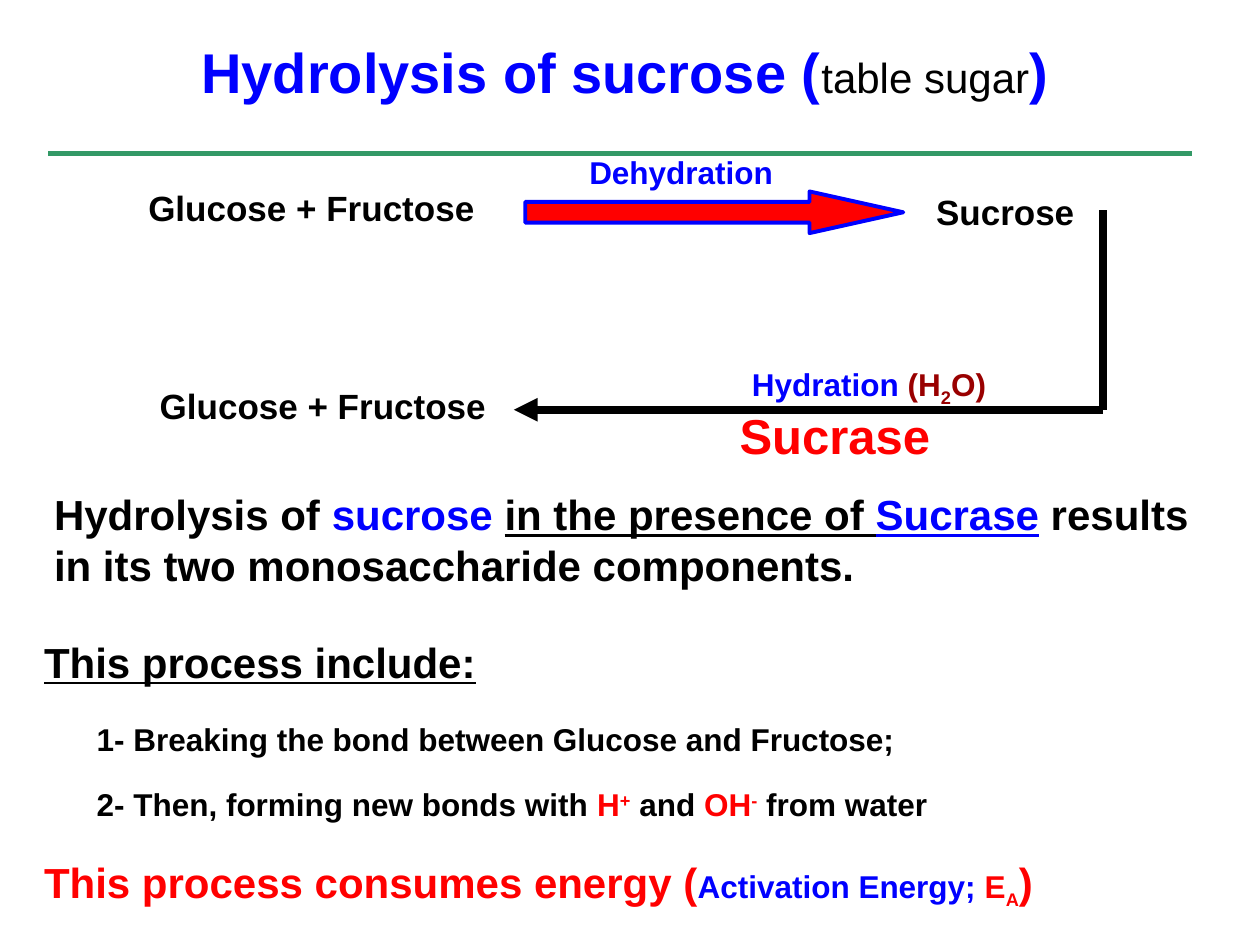
import pptx
import pptx.util
import pptx.dml.color
import pptx.enum.shapes
import pptx.enum.text
import pptx.oxml.ns
import lxml.etree

Cm = pptx.util.Cm
Pt = pptx.util.Pt
RGBColor = pptx.dml.color.RGBColor
qn = pptx.oxml.ns.qn

BLACK = RGBColor(0x00, 0x00, 0x00)
BLUE = RGBColor(0x00, 0x00, 0xFF)
RED = RGBColor(0xFF, 0x00, 0x00)
DARK_RED = RGBColor(0x99, 0x00, 0x00)
GREEN = RGBColor(0x33, 0x99, 0x66)

SUB, SUPER = -25000, 30000


def add_text(shapes, box, size, runs, anchor=pptx.enum.text.MSO_ANCHOR.TOP):
    """Add a text box; each run is (text, colour, optional font settings)."""
    frame = shapes.add_textbox(*(Cm(length) for length in box)).text_frame
    frame.word_wrap = True
    frame.vertical_anchor = anchor
    for text, colour, *settings in runs:
        add_run(frame.paragraphs[0], text, colour, **{"size": size, **dict(*settings)})


def add_run(paragraph, text, colour, size, bold=True, underline=False, baseline=0):
    run = paragraph.add_run()
    run.text = text
    run.font.name = "Arial"
    run.font.size = Pt(size)
    run.font.bold = bold
    run.font.underline = underline
    run.font.color.rgb = colour
    if baseline:
        run.font._element.set("baseline", str(baseline))


def add_line(shapes, start, end, colour, width, arrow=False):
    ends = (Cm(length) for length in (*start, *end))
    line = shapes.add_connector(pptx.enum.shapes.MSO_CONNECTOR.STRAIGHT, *ends)
    line.line.color.rgb = colour
    line.line.width = Pt(width)
    if arrow:
        lxml.etree.SubElement(line.line._get_or_add_ln(), qn("a:tailEnd"), type="triangle")
    lxml.etree.SubElement(line._element.spPr, qn("a:effectLst"))


def add_block_arrow(shapes, box):
    arrow = shapes.add_shape(pptx.enum.shapes.MSO_SHAPE.RIGHT_ARROW,
                             *(Cm(length) for length in box))
    arrow.adjustments[0] = 0.5
    arrow.adjustments[1] = 2.25
    arrow.shadow.inherit = False
    arrow.fill.solid()
    arrow.fill.fore_color.rgb = RED
    arrow.line.color.rgb = BLUE
    arrow.line.width = Pt(2.25)


def add_reaction(shapes):
    monosaccharides = [("Glucose + Fructose", BLACK)]
    add_text(shapes, (2.74, 3.63, 7.42, 1.09), 20, monosaccharides)

    # Dehydration: monosaccharides to sucrose
    dehydration = shapes.add_group_shape().shapes
    add_text(dehydration, (18.62, 3.71, 3.81, 1.09), 20, [("Sucrose", BLACK)])
    add_block_arrow(dehydration, (10.59, 3.86, 7.62, 0.84))
    add_text(dehydration, (11.63, 2.97, 4.45, 1.02), 18, [("Dehydration", BLUE)])

    # Hydration: sucrose back to monosaccharides
    hydration = shapes.add_group_shape().shapes
    corner = (22.23, 8.26)
    add_line(hydration, (22.23, 4.24), corner, BLACK, 4.5)
    add_line(hydration, corner, (10.36, 8.26), BLACK, 4.5, arrow=True)
    add_text(hydration, (14.91, 7.24, 5.31, 1.02), 18, [
        ("Hydration ", BLUE),
        ("(H", DARK_RED),
        ("2", DARK_RED, {"baseline": SUB}),
        ("O)", DARK_RED),
    ])
    add_text(hydration, (14.66, 8.05, 5.31, 1.45), 28, [("Sucrase", RED)])
    add_text(shapes, (2.97, 7.62, 7.42, 1.09), 20, monosaccharides)


def add_explanation(shapes):
    underlined = {"underline": True}
    add_text(shapes, (0.84, 9.73, 23.5, 2.29), 24, [
        ("Hydrolysis of ", BLACK),
        ("sucrose ", BLUE),
        ("in the presence of ", BLACK, underlined),
        ("Sucrase", BLUE, underlined),
        (" results in its two monosaccharide components.", BLACK),
    ])

    # Steps of the process
    add_text(shapes, (0.64, 12.7, 10.36, 1.27), 24,
             [("This process include:", BLACK, underlined)])
    add_text(shapes, (1.7, 14.4, 19.89, 1.02), 18,
             [("1- Breaking the bond between Glucose and Fructose;", BLACK)])
    add_text(shapes, (1.7, 15.7, 19.69, 1.02), 18, [
        ("2- Then, forming new bonds with ", BLACK),
        ("H", RED),
        ("+", RED, {"baseline": SUPER}),
        (" and ", BLACK),
        ("OH", RED),
        ("-", RED, {"baseline": SUPER}),
        (" from water", BLACK),
    ])

    # Energy requirement
    add_text(shapes, (0.64, 17.15, 22.23, 1.27), 24, [
        ("This process consumes energy (", RED),
        ("Activation Energy; ", BLUE, {"size": 18}),
        ("E", RED, {"size": 18}),
        ("A", RED, {"size": 18, "baseline": SUB}),
        (")", RED),
    ])


def main():
    presentation = pptx.Presentation()
    presentation.slide_width = Cm(25.4)
    presentation.slide_height = Cm(19.05)
    shapes = presentation.slides.add_slide(presentation.slide_layouts[6]).shapes

    # Title and rule
    add_text(shapes, (3.81, 0.76, 18.21, 1.35), 32, [
        ("Hydrolysis of sucrose (", BLUE),
        ("table sugar", BLACK, {"size": 24, "bold": False}),
        (")", BLUE),
    ], pptx.enum.text.MSO_ANCHOR.MIDDLE)
    add_line(shapes, (0.97, 3.1), (24.03, 3.1), GREEN, 3)

    add_reaction(shapes)
    add_explanation(shapes)
    presentation.save("out.pptx")


if __name__ == "__main__":
    main()
